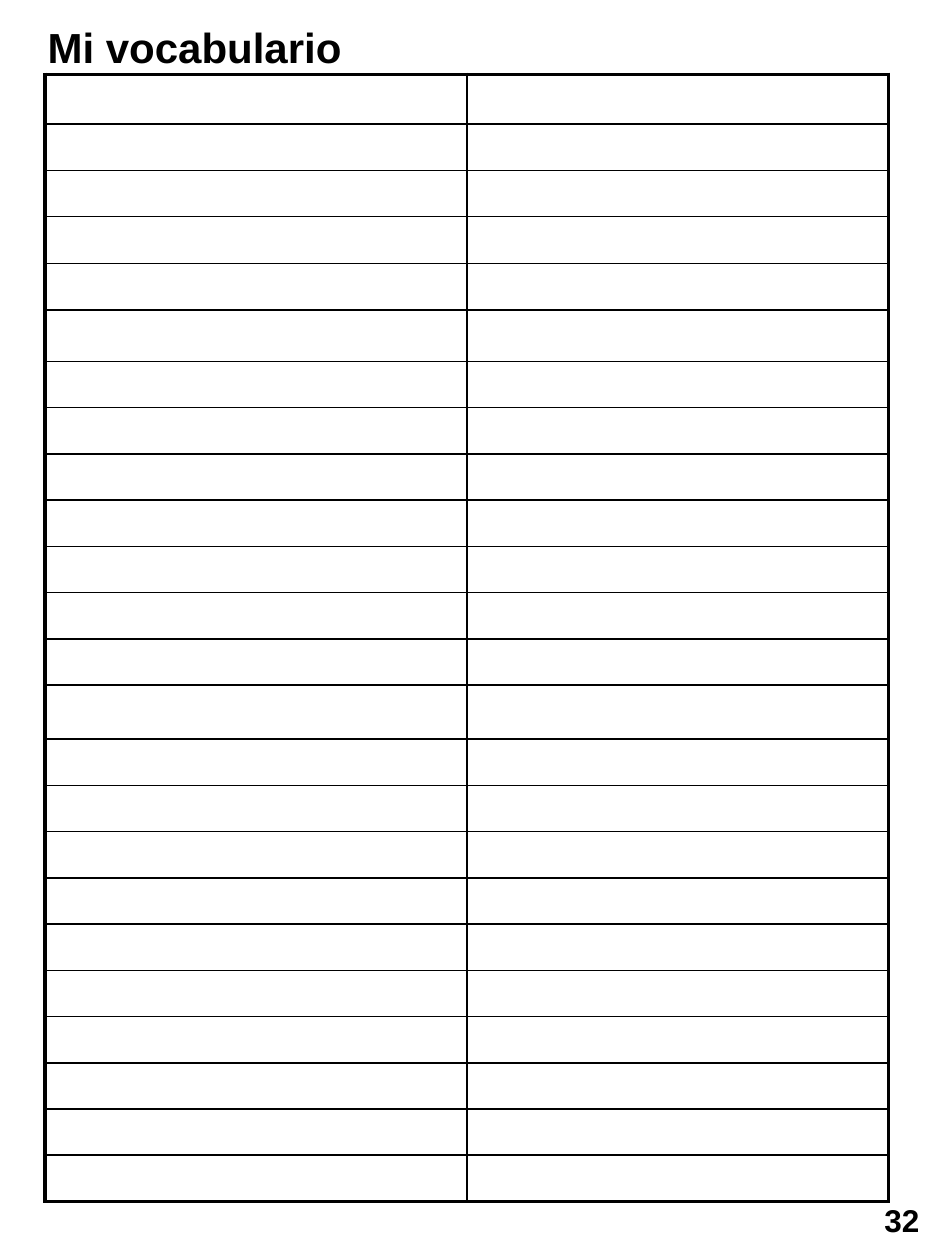
"""Build a vocabulary page with a title, an empty two-column table and a page number."""
from lxml import etree
from pptx import Presentation
from pptx.dml.color import RGBColor
from pptx.enum.shapes import MSO_SHAPE
from pptx.enum.text import MSO_ANCHOR, MSO_AUTO_SIZE, PP_ALIGN
from pptx.oxml.ns import qn
from pptx.util import Cm, Pt

ROUNDED = MSO_SHAPE.ROUNDED_RECTANGLE
MIDDLE = MSO_ANCHOR.MIDDLE
LEFT, CENTER = PP_ALIGN.LEFT, PP_ALIGN.CENTER
GROW = MSO_AUTO_SIZE.SHAPE_TO_FIT_TEXT

TITLE = "Mi vocabulario"
PAGE = "32"
FONT = "Arial"
BLACK = "000000"
ROWS, COLS = 24, 2
TABLE_BOX = (0.91, 1.5, 17, 22.73)
TALL_ROWS = {0: 1.0, 3: 0.95, 5: 1.04, 13: 1.09}
THICK, THIN = 2.25, 1


def rgb(color):
    return RGBColor.from_string(color)


def add_text(sp, text, size=18, color=BLACK, bold=True, align=LEFT, wrap=True):
    tf = sp.text_frame
    tf.word_wrap = wrap
    tf.vertical_anchor = MIDDLE
    p = tf.paragraphs[0]
    p.alignment = align
    r = p.add_run()
    r.text = text
    r.font.name, r.font.size, r.font.bold = FONT, Pt(size), bold
    r.font.color.rgb = rgb(color)
    return tf


def add_borders(cell, widths, color=BLACK):
    tcPr = cell._tc.get_or_add_tcPr()
    for i, (tag, width) in enumerate(widths.items()):
        ln = etree.Element(qn(f"a:{tag}"), w=str(Pt(width)))
        fill = etree.SubElement(ln, qn("a:solidFill"))
        etree.SubElement(fill, qn("a:srgbClr"), val=color)
        tcPr.insert(i, ln)


def add_grid(s):
    left, top, width, height = TABLE_BOX
    table = s.shapes.add_table(ROWS, COLS, *map(Cm, TABLE_BOX)).table
    table.first_row = table.horz_banding = False
    plain = (height - sum(TALL_ROWS.values())) / (ROWS - len(TALL_ROWS))
    for col in table.columns:
        col.width = Cm(width / COLS)
    for i, row in enumerate(table.rows):
        row.height = Cm(TALL_ROWS.get(i, plain))
        for j, cell in enumerate(row.cells):
            cell.margin_top = cell.margin_bottom = 0
            cell.fill.background()
            add_borders(cell, {
                "lnL": THICK if j == 0 else THIN,
                "lnR": THICK if j == COLS - 1 else THIN,
                "lnT": THICK if i == 0 else THIN,
                "lnB": THICK if i == ROWS - 1 else THIN,
            })


def main():
    prs = Presentation()
    prs.slide_width, prs.slide_height = Cm(19.05), Cm(25.4)
    s = prs.slides.add_slide(prs.slide_layouts[6])
    add_grid(s)

    title = s.shapes.add_textbox(Cm(0.71), Cm(0.3), Cm(6.5), Cm(1.3))
    add_text(title, TITLE, size=24, wrap=False).auto_size = GROW

    page = s.shapes.add_shape(ROUNDED, Cm(17.48), Cm(24), Cm(1.4), Cm(1.2))
    page.shadow.inherit = False
    page.fill.background()
    page.line.fill.background()
    add_text(page, PAGE, align=CENTER)

    prs.save("out.pptx")


if __name__ == "__main__":
    main()
